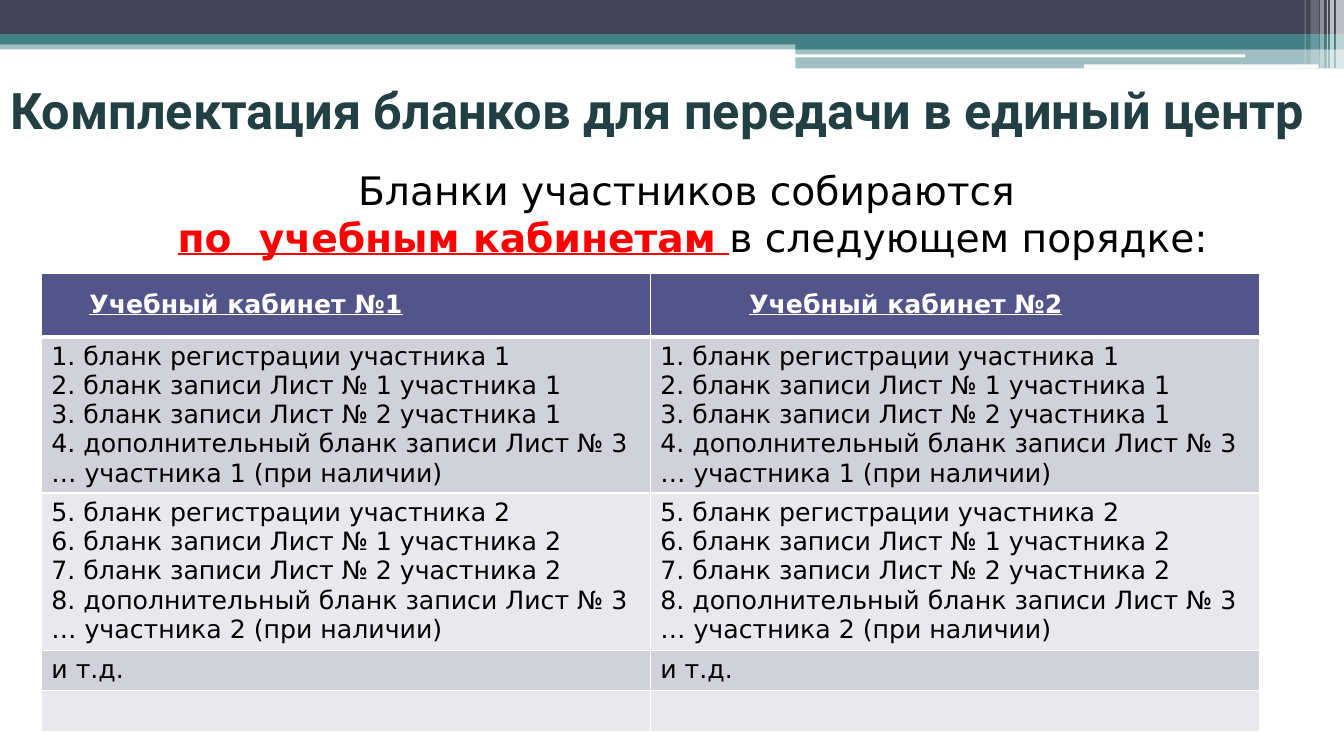
from collections import namedtuple

from lxml import etree
from pptx import Presentation, util as u
from pptx.dml import color
from pptx.enum import shapes, text
from pptx.oxml import ns

COLUMNS, ROWS = 1333, 750
CELL = u.Inches(0.01)
Box = namedtuple("Box", "left top width height")

TEAL, NAVY, WHITE, BLACK = "438086", "424456", "FFFFFF", "000000"
BODY = {"name": "DejaVu Sans", "size": u.Pt(18), "bold": False, "underline": False}
HEADER = {**BODY, "bold": True, "underline": True}
LEAD = {**BODY, "size": u.Pt(28)}
STRONG = {**LEAD, "bold": True, "underline": True}
TITLE = {"name": "Roboto", "size": u.Pt(36), "bold": True}

BAND_PARTS = [
    ((0, 40, 1333, 9), TEAL, 50),
    ((0, 0, 1333, 34), NAVY, 100),
    ((0, 34, 1333, 10), TEAL, 100),
    ((789, 39, 544, 10), TEAL, 100),
    ((789, 48, 544, 20), TEAL, 50),
    ((788, 54, 447, 3), WHITE, 100),
    ((1075, 64, 233, 4), WHITE, 100),
    ((1325, 0, 8, 68), WHITE, 65),
    ((1319, 0, 4, 68), WHITE, 65),
    ((1316, 0, 1, 68), WHITE, 60),
    ((1309, 0, 4, 68), WHITE, 40),
    ((1300, 0, 8, 64), WHITE, 20),
    ((1294, 0, 1, 64), WHITE, 30),
]
ROUNDED = {(788, 54, 447, 3), (1075, 64, 233, 4)}


def paint(target, hex_color):
    target.solid()
    target.fore_color.rgb = color.RGBColor.from_string(hex_color)


def apply(target, values):
    for name, value in values.items():
        setattr(target, name, value)


def emu(box):
    return [round(length * CELL) for length in box]


def within(box, part):
    left, top, width, height = part
    return Box(box.left + left, box.top + top, width, height)


def write(para, content, font, hex_color):
    span = para.add_run()
    span.text = content
    apply(span.font, font)
    paint(span.font.fill, hex_color)


def add_band(page, box):
    kinds = shapes.MSO_SHAPE
    for part, hex_color, opacity in BAND_PARTS:
        kind = kinds.ROUNDED_RECTANGLE if part in ROUNDED else kinds.RECTANGLE
        strip = page.shapes.add_shape(kind, *emu(within(box, part)))
        strip.shadow.inherit = False
        strip.line.fill.background()
        paint(strip.fill, hex_color)
        if opacity < 100:
            tint = strip.fill._xPr.find(".//" + ns.qn("a:srgbClr"))
            etree.SubElement(tint, ns.qn("a:alpha"), val=str(opacity * 1000))


def add_title(page, box):
    title = page.shapes.title
    apply(title, dict(zip(Box._fields, emu(box))))
    apply(title.text_frame, {
        "word_wrap": True,
        "auto_size": text.MSO_AUTO_SIZE.NONE,
        "vertical_anchor": text.MSO_ANCHOR.MIDDLE,
    })
    para = title.text_frame.paragraphs[0]
    para.alignment = text.PP_ALIGN.LEFT
    write(para, "Комплектация бланков для передачи в единый центр", TITLE, "224043")


def add_lead(page, box):
    frame = page.shapes.add_textbox(*emu(box)).text_frame
    frame.word_wrap = True
    first, second = frame.paragraphs[0], frame.add_paragraph()
    first.alignment = second.alignment = text.PP_ALIGN.CENTER
    write(first, "Бланки участников собираются ", LEAD, BLACK)
    write(second, "по  учебным кабинетам ", STRONG, "FF0000")
    write(second, "в следующем порядке:", LEAD, BLACK)


def participant_forms(number):
    first = 4 * number - 3
    forms = [
        "бланк регистрации участника {}",
        "бланк записи Лист № 1 участника {}",
        "бланк записи Лист № 2 участника {}",
        "дополнительный бланк записи Лист № 3 … участника {} (при наличии)",
    ]
    return [f"{i}. {form.format(number)}" for i, form in enumerate(forms, first)]


def add_borders(cell, bottom):
    properties = cell._tc.get_or_add_tcPr()
    for side, width in (("L", 1), ("R", 1), ("T", 1), ("B", bottom)):
        line = etree.SubElement(properties, ns.qn("a:ln" + side), w=str(u.Pt(width)))
        fill = etree.SubElement(line, ns.qn("a:solidFill"))
        etree.SubElement(fill, ns.qn("a:srgbClr"), val=WHITE)


def fill_cell(cell, lines, font, text_color, fill_color, bottom=1):
    add_borders(cell, bottom)
    paint(cell.fill, fill_color)
    for index, content in enumerate(lines):
        frame = cell.text_frame
        para = frame.add_paragraph() if index else frame.paragraphs[0]
        write(para, content, font, text_color)


def add_rooms(page, box):
    heights = [63, 155, 156, 40, 40]
    contents = [participant_forms(1), participant_forms(2), ["и т.д."], []]
    table = page.shapes.add_table(len(heights), 2, *emu(box)).table
    apply(table, {"first_row": False, "horz_banding": False})
    for row, height in zip(table.rows, heights):
        row.height = height * CELL
    for column, header_inset in enumerate((208, 107)):
        table.columns[column].width = round(box.width / 2 * CELL)
        header = table.cell(0, column)
        fill_cell(header, [f"Учебный кабинет №{column + 1}"], HEADER, WHITE, "53548A", 3)
        apply(header, {
            "vertical_anchor": text.MSO_ANCHOR.MIDDLE,
            "margin_right": header_inset * CELL,
        })
        header.text_frame.paragraphs[0].alignment = text.PP_ALIGN.CENTER
        for row, lines in enumerate(contents, 1):
            stripe = "D1D1DA" if row % 2 else "E9E9ED"
            fill_cell(table.cell(row, column), lines, BODY, BLACK, stripe)


def main():
    deck = Presentation()
    apply(deck, {"slide_width": COLUMNS * CELL, "slide_height": ROWS * CELL})
    page = deck.slides.add_slide(deck.slide_layouts[5])
    add_band(page, Box(0, 0, COLUMNS, 68))
    add_title(page, Box(0, 63, COLUMNS, 90))
    add_rooms(page, Box(41, 271, 1208, 454))
    add_lead(page, Box(66, 160, 1242, 104))
    deck.save("out.pptx")


if __name__ == "__main__":
    main()
